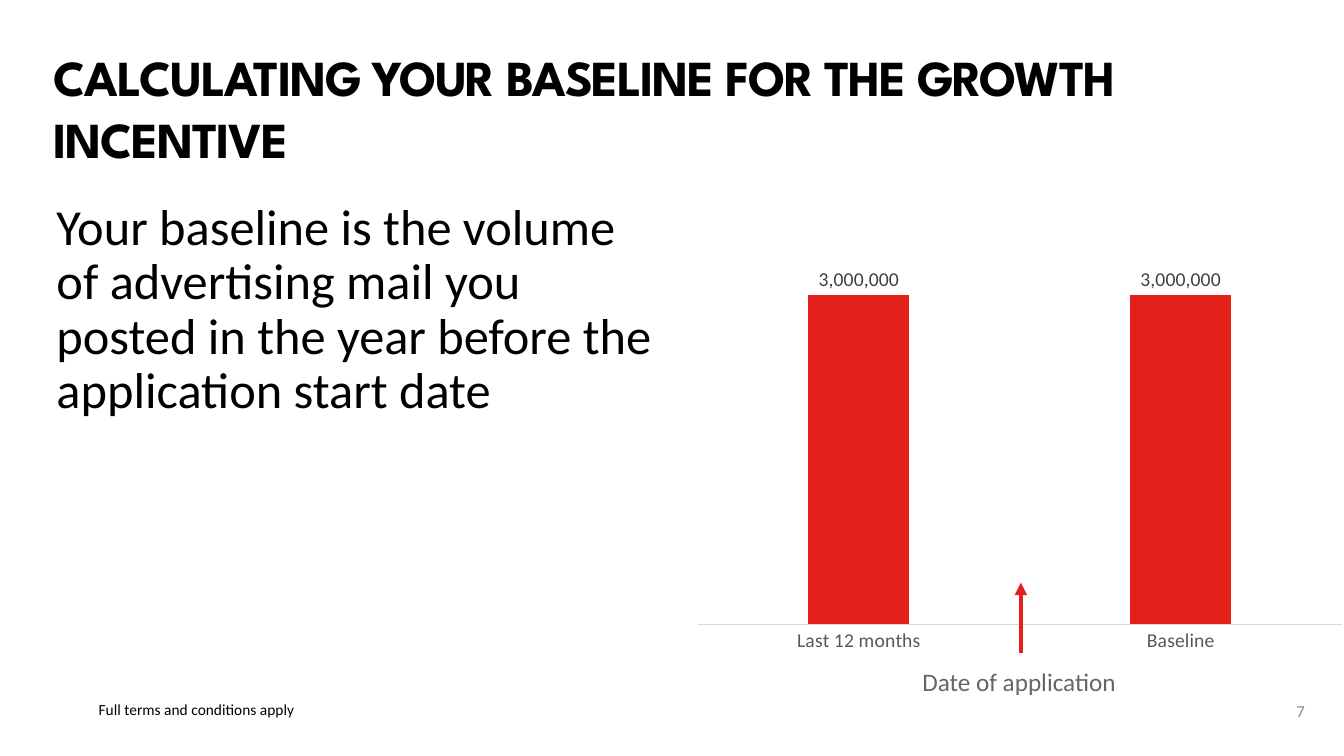
from pptx import Presentation
from pptx.chart.data import CategoryChartData
from pptx.dml.color import RGBColor
from pptx.enum.chart import XL_CHART_TYPE, XL_LABEL_POSITION, XL_TICK_LABEL_POSITION, XL_TICK_MARK
from pptx.enum.shapes import MSO_CONNECTOR
from pptx.enum.text import MSO_ANCHOR, MSO_AUTO_SIZE, PP_ALIGN
from pptx.oxml.ns import qn
from pptx.util import Inches, Pt
from lxml.etree import SubElement

COLOURS = {"ink": "000000", "red": "E32019", "number": "8C8C8C", "caption": "666666",
           "axis_text": "595959", "axis_line": "D9D9D9", "value": "404040"}


def colour(name):
    return RGBColor.from_string(COLOURS[name])


def style_font(font, size, tint, face="Calibri", bold=False):
    font.name, font.size, font.bold = face, Pt(size), bold
    font.color.rgb = colour(tint)


def place(shape, box):
    shape.left, shape.top, shape.width, shape.height = map(Inches, box)


def fill_text(shape, text, size, tint, face="Calibri", bold=False,
              spacing=1.0, align=PP_ALIGN.LEFT, anchor=MSO_ANCHOR.TOP, wrap=True):
    frame = shape.text_frame
    frame.text = text
    frame.word_wrap = wrap
    frame.auto_size = MSO_AUTO_SIZE.NONE
    frame.vertical_anchor = anchor
    para = frame.paragraphs[0]
    para.alignment = align
    para.line_spacing = spacing
    para.space_before = Pt(0)
    span = para.runs[0]
    style_font(span.font, size, tint, face, bold)
    return frame


def add_label(page, box, text, size, tint, **options):
    label = page.shapes.add_textbox(*map(Inches, box))
    return fill_text(label, text, size, tint, **options)


def add_title(page, box):
    title = page.shapes.title
    place(title, box)
    frame = fill_text(title, "CALCULATING YOUR BASELINE FOR THE GROWTH INCENTIVE", 36, "ink",
                      face="League Spartan", bold=True, spacing=Pt(44))
    frame.margin_left = frame.margin_top = frame.margin_right = frame.margin_bottom = 0
    frame.paragraphs[0].runs[0].font._element.set("spc", "-100")


def add_body(page, box):
    body = page.placeholders[1]
    place(body, box)
    frame = fill_text(body, "Your baseline is the volume of advertising mail you posted "
                      "in the year before the application start date", 36, "ink", spacing=0.9)
    properties = frame.paragraphs[0]._p.get_or_add_pPr()
    properties.set("marL", "0")
    properties.set("indent", "0")
    SubElement(properties, qn("a:buNone"))


def add_baseline_chart(page, box):
    volumes = CategoryChartData(number_format="#,##0")
    volumes.categories = ["Last 12 months", "Baseline"]
    volumes.add_series("Series 1", [3000000, 3000000])
    chart = page.shapes.add_chart(XL_CHART_TYPE.COLUMN_CLUSTERED, *map(Inches, box), volumes).chart
    chart.has_legend = chart.has_title = False
    style_font(chart.font, 10, "ink")

    value_axis = chart.value_axis
    value_axis.visible = value_axis.has_major_gridlines = False
    value_axis.minimum_scale, value_axis.maximum_scale = 0, 3500000

    category_axis = chart.category_axis
    category_axis.major_tick_mark = category_axis.minor_tick_mark = XL_TICK_MARK.NONE
    category_axis.tick_label_position = XL_TICK_LABEL_POSITION.NEXT_TO_AXIS
    category_axis.format.line.color.rgb = colour("axis_line")
    category_axis.format.line.width = Pt(0.75)
    style_font(category_axis.tick_labels.font, 14, "axis_text")

    plot = chart.plots[0]
    plot.gap_width, plot.overlap, plot.vary_by_categories = 219, -27, False
    bars = plot.series[0]
    bars.format.fill.solid()
    bars.format.fill.fore_color.rgb = colour("red")
    labels = bars.data_labels
    labels.show_value = True
    labels.position = XL_LABEL_POSITION.OUTSIDE_END
    labels.number_format, labels.number_format_is_linked = "#,##0", False
    style_font(labels.font, 14, "value")


def add_date_marker(page, box):
    left, top, width, height = box
    label_height, arrow_height = 0.4, 0.7
    arrow_x = left + width / 2
    arrow = page.shapes.add_connector(MSO_CONNECTOR.STRAIGHT, Inches(arrow_x), Inches(top),
                                      Inches(arrow_x), Inches(top + arrow_height))
    arrow.line.color.rgb = colour("red")
    arrow.line.width = Pt(3)
    SubElement(arrow.line._get_or_add_ln(), qn("a:headEnd"), type="triangle")
    SubElement(arrow._element.spPr, qn("a:effectLst"))
    add_label(page, (left, top + height - label_height, width, label_height),
              "Date of application", 18, "caption", wrap=False)


def add_footer(page, box):
    left, top, width, height = box
    number_width = 0.41
    terms = add_label(page, (left, top + 0.12, 5.7, 0.15), "Full terms and conditions apply",
                      11, "ink", spacing=0.9, wrap=False)
    terms.margin_top = terms.margin_bottom = 0
    add_label(page, (left + width - number_width, top, number_width, height), "7", 12, "number",
              align=PP_ALIGN.RIGHT, anchor=MSO_ANCHOR.MIDDLE)


def main():
    deck = Presentation()
    deck.slide_width, deck.slide_height = Inches(13.33), Inches(7.5)
    page = deck.slides.add_slide(deck.slide_layouts[1])
    add_title(page, (0.53, 0.45, 11.01, 0.52))
    add_body(page, (0.46, 1.95, 6.2, 4.9))
    add_baseline_chart(page, (6.79, 2.3, 6.65, 4.26))
    add_date_marker(page, (9.05, 5.78, 2.15, 1.18))
    add_footer(page, (0.88, 6.85, 12.16, 0.4))
    deck.save("out.pptx")


if __name__ == "__main__":
    main()
